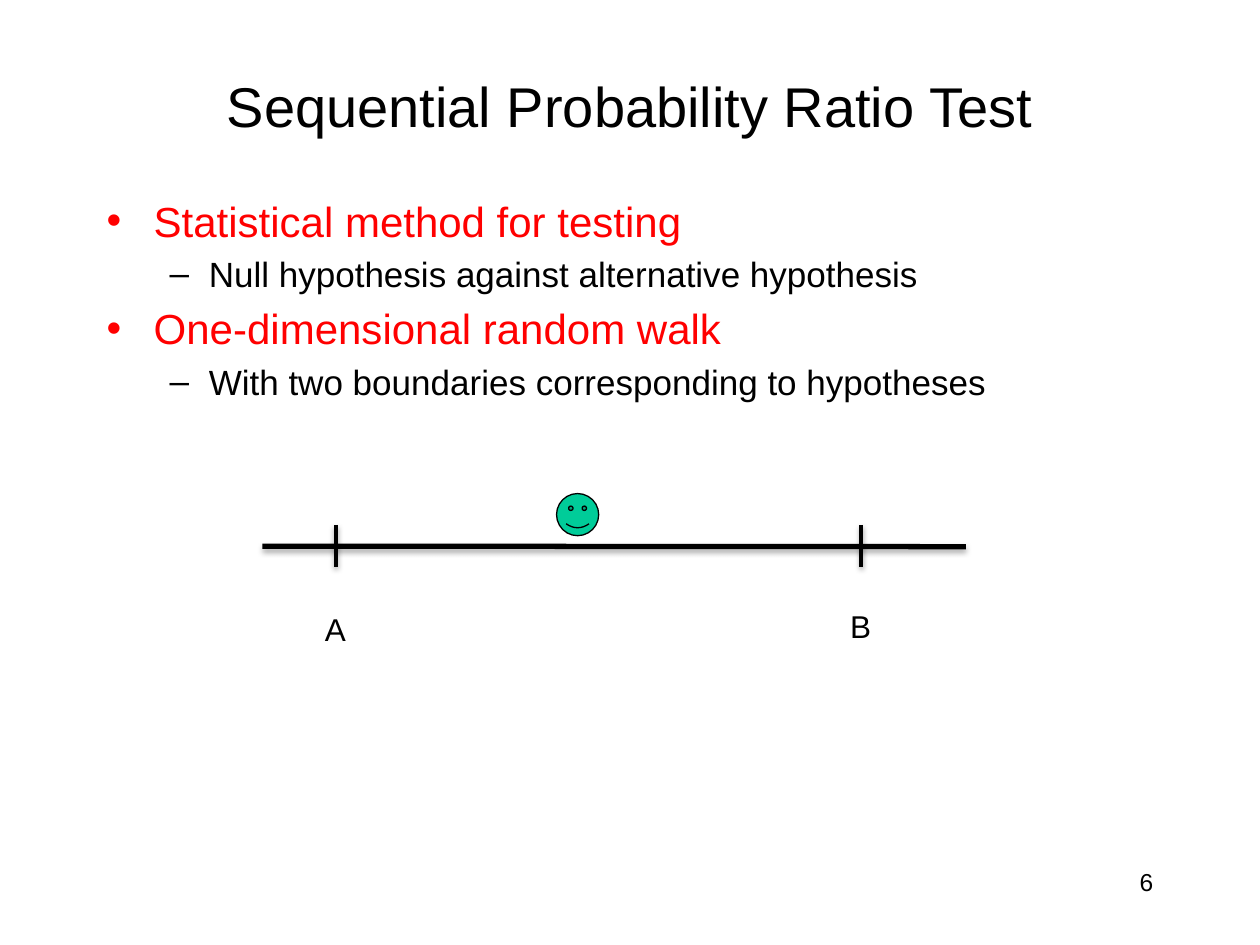
from dataclasses import dataclass
from typing import Any

from lxml.etree import SubElement
from pptx import Presentation
from pptx.dml.color import RGBColor
from pptx.enum.shapes import MSO_CONNECTOR, MSO_SHAPE
from pptx.enum.text import MSO_ANCHOR, MSO_AUTO_SIZE, PP_ALIGN
from pptx.oxml.ns import qn
from pptx.util import Cm, Pt

BLACK = RGBColor(0x00, 0x00, 0x00)
RED = RGBColor(0xFF, 0x00, 0x00)
GREEN = RGBColor(0x00, 0xCC, 0x99)
FONT = "Arial"
MARGIN, CONTENT_WIDTH = 1.9, 21.6
AXIS_TOP, TICK_TOP, TICK_BOTTOM = 11.01, 10.58, 11.43


@dataclass(frozen=True)
class Level:
    bullet: str
    margin: float
    indent: float
    size: float
    color: RGBColor


@dataclass(frozen=True)
class Point:
    text: str
    level: int


@dataclass(frozen=True)
class Boundary:
    name: str
    x: float
    label_top: float


LEVELS = (
    Level("•", 0.95, -0.95, 24, RED),
    Level("–", 2.06, -0.79, 20, BLACK),
)
POINTS = (
    Point("Statistical method for testing", 0),
    Point("Null hypothesis against alternative hypothesis", 1),
    Point("One-dimensional random walk", 0),
    Point("With two boundaries corresponding to hypotheses", 1),
)
BOUNDARIES = (Boundary("A", 6.77, 12.17), Boundary("B", 17.36, 12.12))


def apply_format(target: Any, values: dict[str, Any]) -> None:
    for attribute, value in values.items():
        setattr(target, attribute, value)


def add_frame(slide: Any, left: float, top: float, width: float, height: float,
              **frame_format: Any) -> Any:
    frame = slide.shapes.add_textbox(Cm(left), Cm(top), Cm(width), Cm(height)).text_frame
    apply_format(frame, {"word_wrap": True, **frame_format})
    return frame


def write(paragraph: Any, text: str, size: float, color: RGBColor = BLACK,
          **paragraph_format: Any) -> None:
    apply_format(paragraph, paragraph_format)
    run = paragraph.add_run()
    run.text = text
    apply_format(run.font, {"name": FONT, "size": Pt(size)})
    run.font.color.rgb = color


def write_point(paragraph: Any, point: Point) -> None:
    level = LEVELS[point.level]
    write(paragraph, point.text, level.size, level.color,
          level=point.level, space_before=Pt(level.size * 0.2))
    properties = paragraph._p.get_or_add_pPr()
    properties.set("marL", str(Cm(level.margin)))
    properties.set("indent", str(Cm(level.indent)))
    SubElement(properties, qn("a:buFont"), typeface=FONT)
    SubElement(properties, qn("a:buChar"), char=level.bullet)


def add_line(slide: Any, x1: float, y1: float, x2: float, y2: float,
             width: float, shadow_distance: float, shadow_opacity: int) -> None:
    line = slide.shapes.add_connector(MSO_CONNECTOR.STRAIGHT, Cm(x1), Cm(y1), Cm(x2), Cm(y2))
    line.line.color.rgb = BLACK
    line.line.width = Pt(width)
    effects = SubElement(line._element.spPr, qn("a:effectLst"))
    shadow = SubElement(effects, qn("a:outerShdw"), blurRad=str(Pt(3.1)),
                        dist=str(Pt(shadow_distance)), dir="5400000", rotWithShape="0")
    shade = SubElement(shadow, qn("a:srgbClr"), val=str(BLACK))
    SubElement(shade, qn("a:alpha"), val=str(shadow_opacity * 1000))


def add_boundary(slide: Any, boundary: Boundary) -> None:
    add_line(slide, boundary.x, TICK_TOP, boundary.x, TICK_BOTTOM, 2, 1.6, 38)
    label_width = 0.94
    label = add_frame(slide, boundary.x - label_width / 2, boundary.label_top,
                      label_width, 1.02, word_wrap=False,
                      auto_size=MSO_AUTO_SIZE.SHAPE_TO_FIT_TEXT)
    write(label.paragraphs[0], boundary.name, 18)


def add_walker(slide: Any) -> None:
    walker = slide.shapes.add_shape(MSO_SHAPE.SMILEY_FACE, Cm(11.22), Cm(9.95), Cm(0.85), Cm(0.85))
    walker.shadow.inherit = False
    walker.fill.solid()
    walker.fill.fore_color.rgb = GREEN
    walker.line.color.rgb = BLACK
    walker.line.width = Pt(0.75)


def main() -> None:
    presentation = Presentation()
    apply_format(presentation, {"slide_width": Cm(25.4), "slide_height": Cm(19.05)})
    slide = presentation.slides.add_slide(presentation.slide_layouts[6])

    title = add_frame(slide, MARGIN, 1.06, CONTENT_WIDTH, 2.12,
                      vertical_anchor=MSO_ANCHOR.MIDDLE)
    write(title.paragraphs[0], "Sequential Probability Ratio Test", 32,
          alignment=PP_ALIGN.CENTER)

    body = add_frame(slide, MARGIN, 3.81, CONTENT_WIDTH, 4.87)
    for index, point in enumerate(POINTS):
        write_point(body.add_paragraph() if index else body.paragraphs[0], point)

    page_number = add_frame(slide, 18.21, 17.35, 5.29, 1.27)
    write(page_number.paragraphs[0], "6", 14, alignment=PP_ALIGN.RIGHT)

    add_line(slide, 5.29, AXIS_TOP, 19.47, AXIS_TOP + 0.01, 3, 1.8, 35)
    for boundary in BOUNDARIES:
        add_boundary(slide, boundary)
    add_walker(slide)

    presentation.save("out.pptx")


if __name__ == "__main__":
    main()
